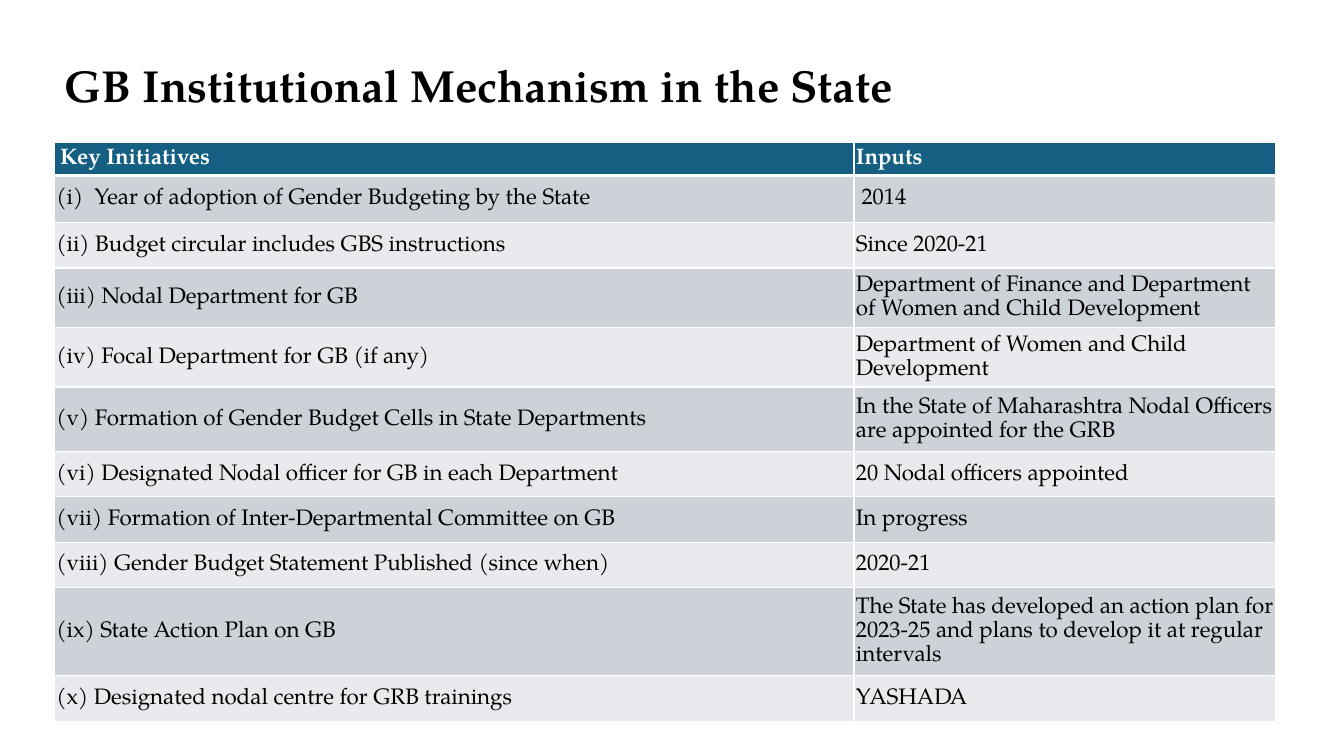
from lxml.etree import SubElement
from pptx import Presentation
from pptx.dml.color import RGBColor
from pptx.enum.text import MSO_ANCHOR as Anchor
from pptx.oxml.ns import qn
from pptx.util import Emu, Pt

EMU_PER_PX = 9144  # 100 px to the inch
BLACK = RGBColor(0x00, 0x00, 0x00)
WHITE = RGBColor(0xFF, 0xFF, 0xFF)
TEAL = RGBColor(0x15, 0x60, 0x82)
BAND_DARK = RGBColor(0xCC, 0xD2, 0xD8)
BAND_LIGHT = RGBColor(0xE8, 0xEA, 0xED)

COLUMN_WIDTHS = (793, 418)
ROW_HEIGHTS = (33, 47, 45, 45, 45, 64, 45, 45, 45, 45, 45)
INITIATIVES = (
    (" Key Initiatives", "Inputs"),
    ("(i)  Year of adoption of Gender Budgeting by the State", " 2014"),
    ("(ii) Budget circular includes GBS instructions", "Since 2020-21"),
    ("(iii) Nodal Department for GB",
     "Department of Finance and Department of Women and Child Development"),
    ("(iv) Focal Department for GB (if any)",
     "Department of Women and Child Development"),
    ("(v) Formation of Gender Budget Cells in State Departments",
     "In the State of Maharashtra Nodal Officers are appointed for the GRB"),
    ("(vi) Designated Nodal officer for GB in each Department",
     "20 Nodal officers appointed"),
    ("(vii) Formation of Inter-Departmental Committee on GB", "In progress"),
    ("(viii) Gender Budget Statement Published (since when)", "2020-21"),
    ("(ix) State Action Plan on GB",
     "The State has developed an action plan for 2023-25 and plans to "
     "develop it at regular intervals"),
    ("(x) Designated nodal centre for GRB trainings", "YASHADA"),
)


def px(length):
    return Emu(length * EMU_PER_PX)


class SlideBuilder:
    font_name = "TeX Gyre Pagella"
    title_size = Pt(32)
    cell_size = Pt(16)

    def __init__(self, slide):
        self.slide = slide

    def set_text(self, paragraph, text, size, color, bold, line_spacing):
        paragraph.text = text
        paragraph.line_spacing = line_spacing
        font = paragraph.font
        font.name, font.size, font.bold = self.font_name, size, bold
        font.color.rgb = color

    def title(self, text, left, top, width, height):
        frame = self.slide.shapes.add_textbox(
            px(left), px(top), px(width), px(height)).text_frame
        frame.word_wrap = True
        frame.vertical_anchor = Anchor.MIDDLE
        self.set_text(frame.paragraphs[0], text, self.title_size, BLACK, True, 0.9)

    def borders(self, cell, row):
        """Rule the cell in white, with a heavier line under the header."""
        properties = cell._tc.get_or_add_tcPr()
        widths = {"L": 1, "R": 1, "T": 3 if row == 1 else 1,
                  "B": 3 if row == 0 else 1}
        for side, width in widths.items():
            line = SubElement(properties, qn(f"a:ln{side}"), w=str(Pt(width)))
            fill = SubElement(line, qn("a:solidFill"))
            SubElement(fill, qn("a:srgbClr"), val=str(WHITE))

    def cell(self, cell, text, row, column):
        header = row == 0
        inset_x, inset_y = (0, 0) if header and column == 0 else (2, 1)
        cell.margin_left = cell.margin_right = px(inset_x)
        cell.margin_top = cell.margin_bottom = px(inset_y)
        cell.vertical_anchor = Anchor.MIDDLE
        self.borders(cell, row)
        cell.fill.solid()
        band = BAND_DARK if row % 2 else BAND_LIGHT
        cell.fill.fore_color.rgb = TEAL if header else band
        paragraph = cell.text_frame.paragraphs[0]
        self.set_text(paragraph, text, self.cell_size,
                      WHITE if header else BLACK, header, 1.07)
        paragraph.space_after = Pt(8)

    def table(self, rows, left, top, column_widths, row_heights):
        table = self.slide.shapes.add_table(
            len(rows), len(column_widths), px(left), px(top),
            px(sum(column_widths)), px(sum(row_heights))).table
        for column, width in zip(table.columns, column_widths):
            column.width = px(width)
        for row, height in zip(table.rows, row_heights):
            row.height = px(height)
        for row, texts in enumerate(rows):
            for column, text in enumerate(texts):
                self.cell(table.cell(row, column), text, row, column)


def main():
    presentation = Presentation()
    presentation.slide_width = px(1333)
    presentation.slide_height = px(750)
    blank = presentation.slide_layouts[6]
    builder = SlideBuilder(presentation.slides.add_slide(blank))
    builder.title("GB Institutional Mechanism in the State", 54, 44, 957, 87)
    builder.table(INITIATIVES, 54, 141, COLUMN_WIDTHS, ROW_HEIGHTS)
    presentation.save("out.pptx")


if __name__ == "__main__":
    main()
